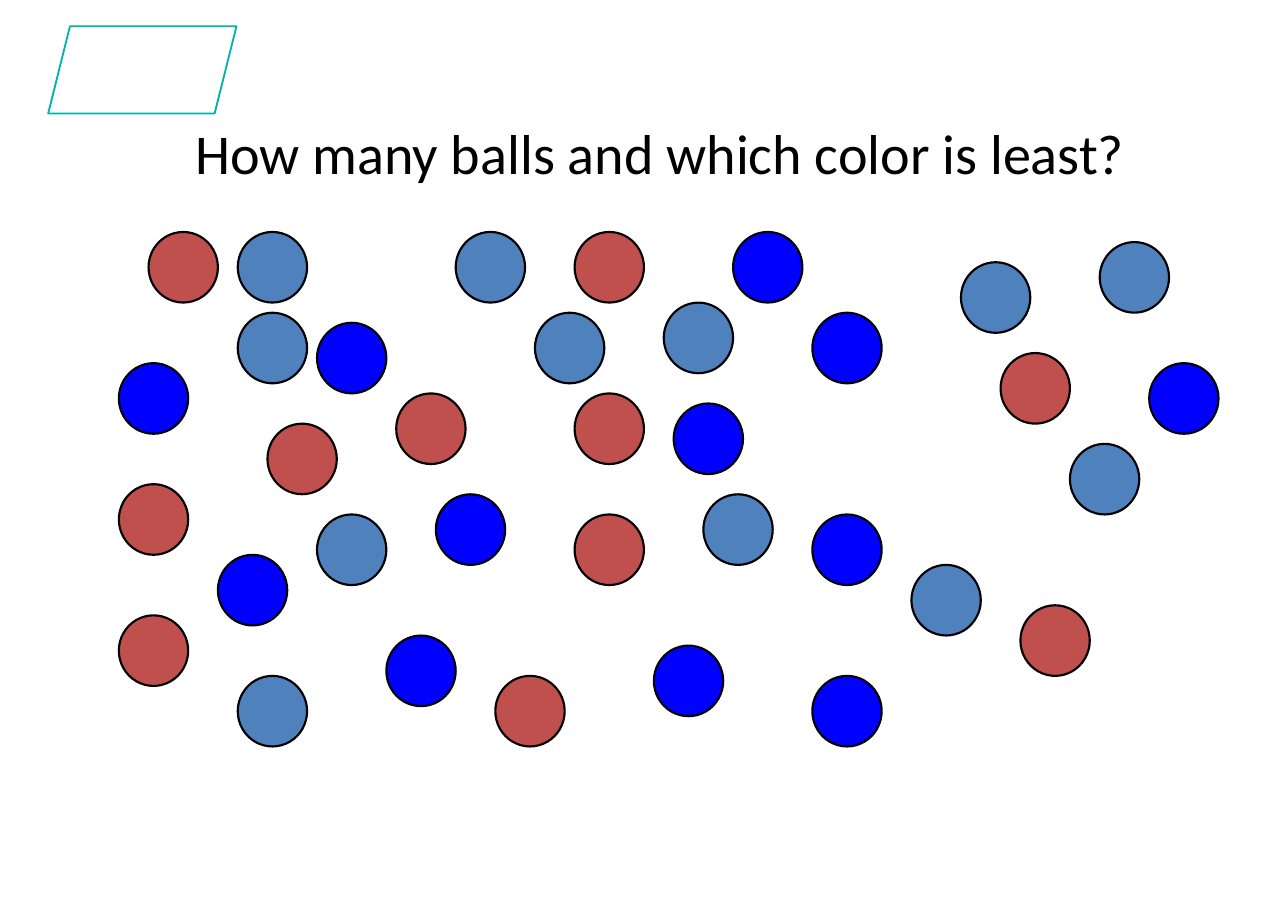
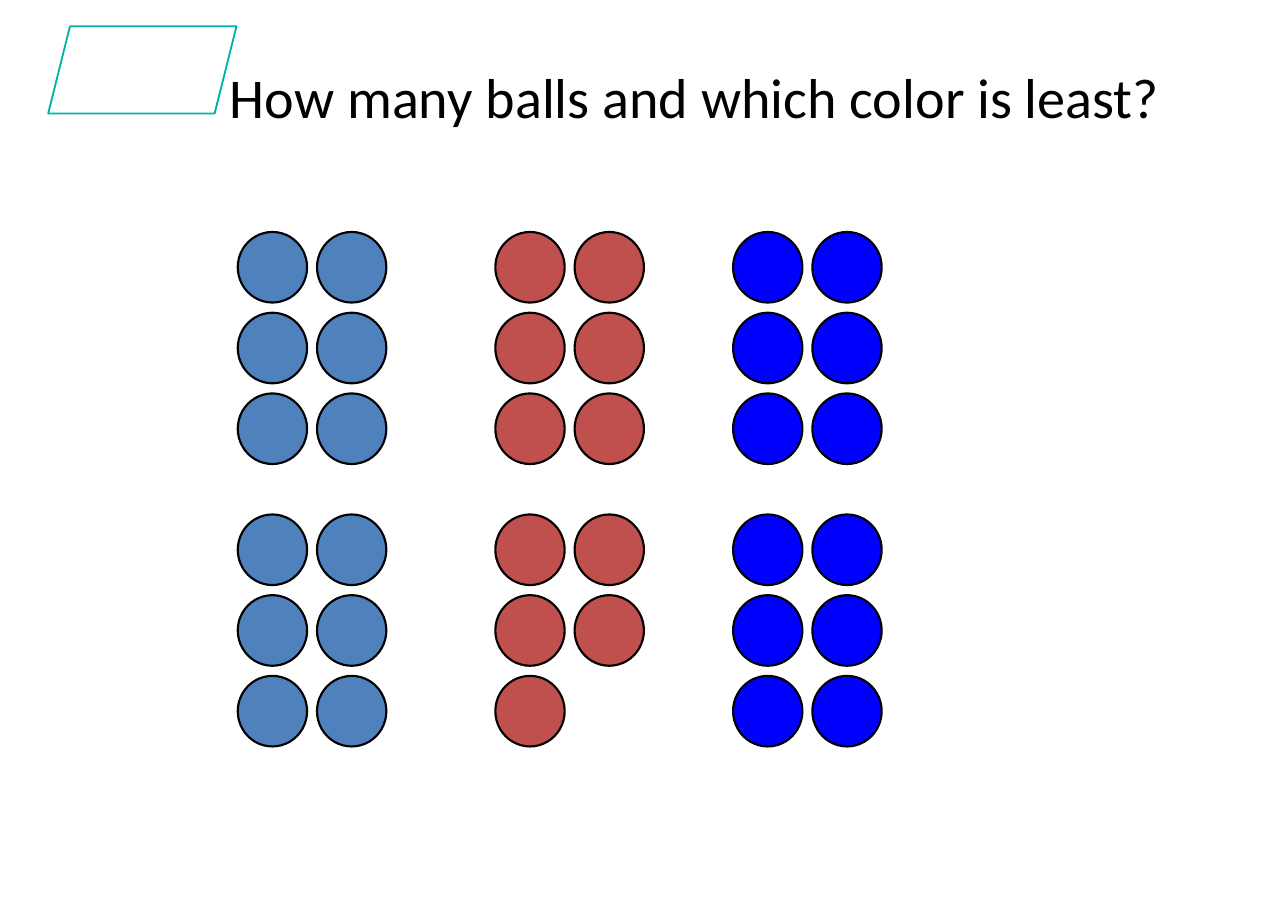
"""Build two ball-counting slides."""
from itertools import islice, product

from pptx import Presentation
from pptx.dml.color import RGBColor
from pptx.enum.shapes import MSO_SHAPE
from pptx.enum.text import MSO_ANCHOR, MSO_AUTO_SIZE, PP_ALIGN
from pptx.util import Pt

OVAL, PARALLELOGRAM = MSO_SHAPE.OVAL, MSO_SHAPE.PARALLELOGRAM
TOP, CENTER, NO_FIT = MSO_ANCHOR.TOP, PP_ALIGN.CENTER, MSO_AUTO_SIZE.NONE
TITLE_ONLY = 5
LIGHT, RED, BLUE = "4F81BD", "C0504D", "0000FF"
BLACK, TEAL = "000000", "00B3A9"
WIDTH, HEIGHT = 596, 420
STEP_X, STEP_Y, BALL_STEPS = WIDTH / 130, HEIGHT / 90, 7
QUESTION = "How many balls and which color is least?"

SCATTERED = {
    LIGHT: [(24, 23), (54, 31), (24, 31), (46, 23), (97, 26), (71, 49),
            (108, 44), (32, 51), (92, 56), (67, 30), (24, 67), (111, 24)],
    RED: [(15, 23), (58, 23), (40, 39), (101, 35), (58, 39), (12, 48),
          (58, 51), (27, 42), (12, 61), (50, 67), (103, 60)],
    BLUE: [(74, 23), (12, 36), (22, 55), (82, 31), (44, 49), (68, 40),
           (32, 32), (82, 51), (39, 63), (66, 64), (116, 36), (82, 67)],
}
GROUP_COLUMNS = {LIGHT: 24, RED: 50, BLUE: 74}
GROUP_ROWS = (23, 31, 39, 51, 59, 67)


def rgb(value):
    """Turn a hex string into a colour."""
    return RGBColor.from_string(value)


class Deck:
    """Hold the style and the current slide."""

    font, title_size = "Calibri", 26

    def __init__(self):
        """Start an empty presentation."""
        self.prs = Presentation()
        self.prs.slide_width, self.prs.slide_height = Pt(WIDTH), Pt(HEIGHT)
        self.s = None

    def slide(self, text, box):
        """Add a slide with its corner mark and title."""
        self.s = self.prs.slides.add_slide(self.prs.slide_layouts[TITLE_ONLY])
        self.shape(PARALLELOGRAM, (22.3, 12.2, 87.1, 40.3), TEAL, 0.84)
        self.title(text, box)

    def title(self, text, box):
        """Place and format the title."""
        sp = self.s.shapes.title
        sp.left, sp.top, sp.width, sp.height = map(Pt, box)
        tf = sp.text_frame
        tf.word_wrap, tf.auto_size, tf.vertical_anchor = True, NO_FIT, TOP
        tf.margin_left = tf.margin_right = Pt(5.76)
        tf.margin_top = tf.margin_bottom = Pt(2.88)
        p = tf.paragraphs[0]
        p.alignment = CENTER
        r = p.add_run()
        r.text = text
        r.font.name, r.font.size = self.font, Pt(self.title_size)
        r.font.color.rgb = rgb(BLACK)

    def shape(self, kind, box, line, width, fill=None):
        """Add an outlined shape, filled if a fill is given."""
        sp = self.s.shapes.add_shape(kind, *map(Pt, box))
        sp.shadow.inherit = False
        sp.line.color.rgb, sp.line.width = rgb(line), Pt(width)
        if fill:
            sp.fill.solid()
            sp.fill.fore_color.rgb = rgb(fill)
        else:
            sp.fill.background()

    def balls(self, spots, color):
        """Add one ball at each (column, row) spot of the fine grid."""
        for col, row in spots:
            box = (col * STEP_X, row * STEP_Y,
                   BALL_STEPS * STEP_X, BALL_STEPS * STEP_Y)
            self.shape(OVAL, box, BLACK, 1, color)


def main():
    """Build and save both slides."""
    deck = Deck()
    deck.slide(QUESTION, (38.9, 52, 533.5, 38.2))
    for color, spots in SCATTERED.items():
        deck.balls(spots, color)

    deck.slide(QUESTION, (47.4, 25.7, 548.6, 69.8))
    for color, col in GROUP_COLUMNS.items():
        spots = ((x, y) for y, x in product(GROUP_ROWS, (col, col + 8)))
        deck.balls(islice(spots, len(SCATTERED[color])), color)
    deck.prs.save("out.pptx")


if __name__ == "__main__":
    main()
